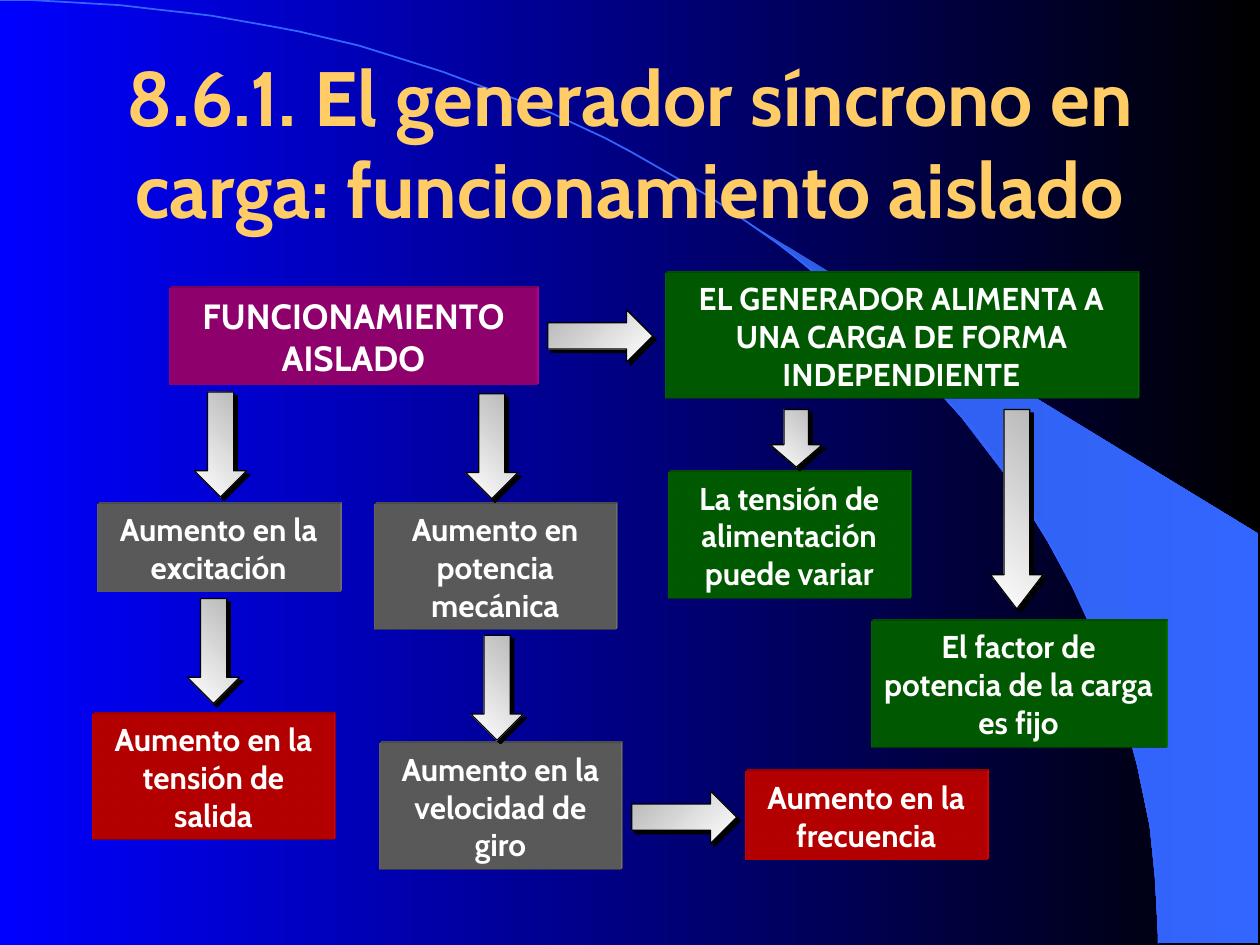
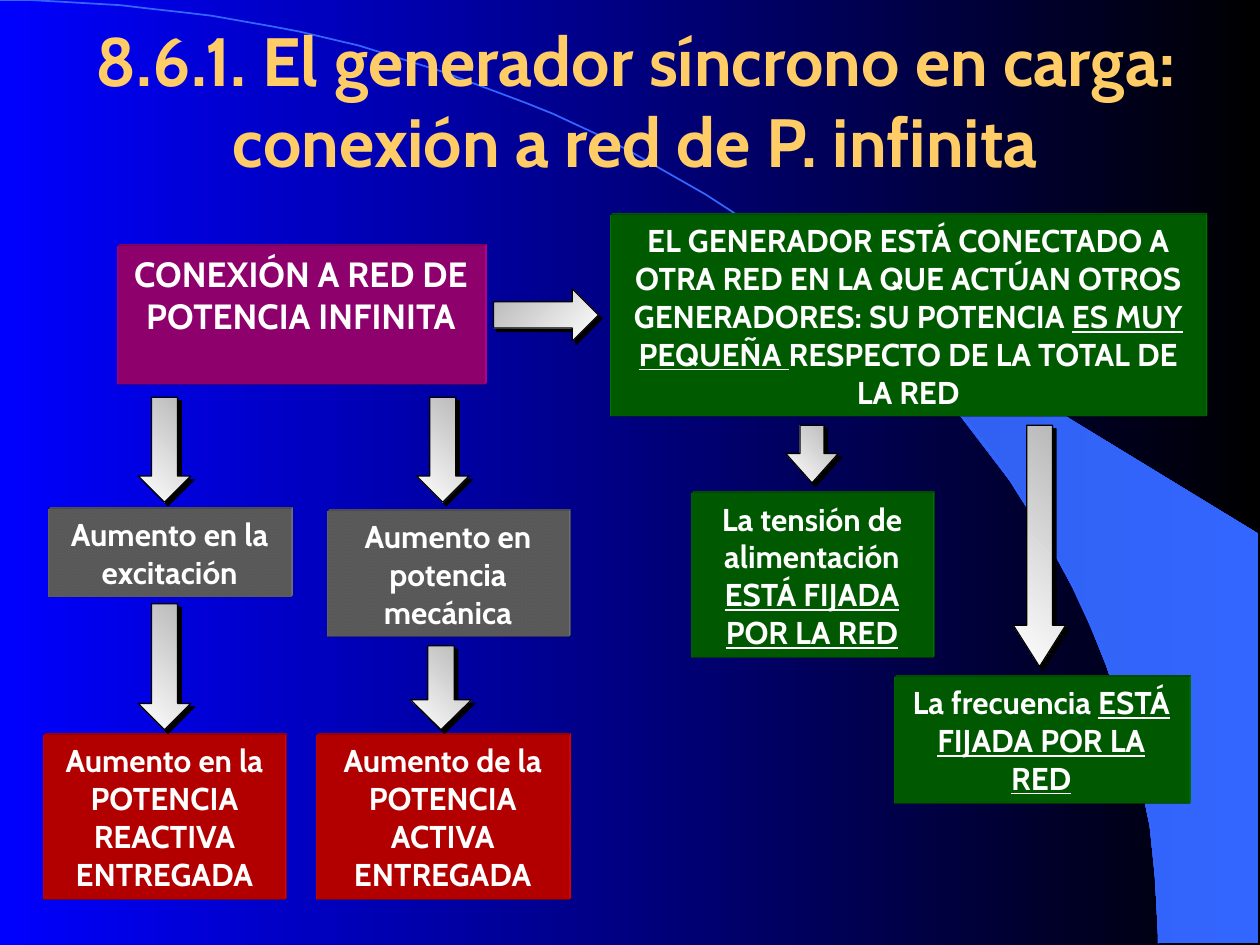
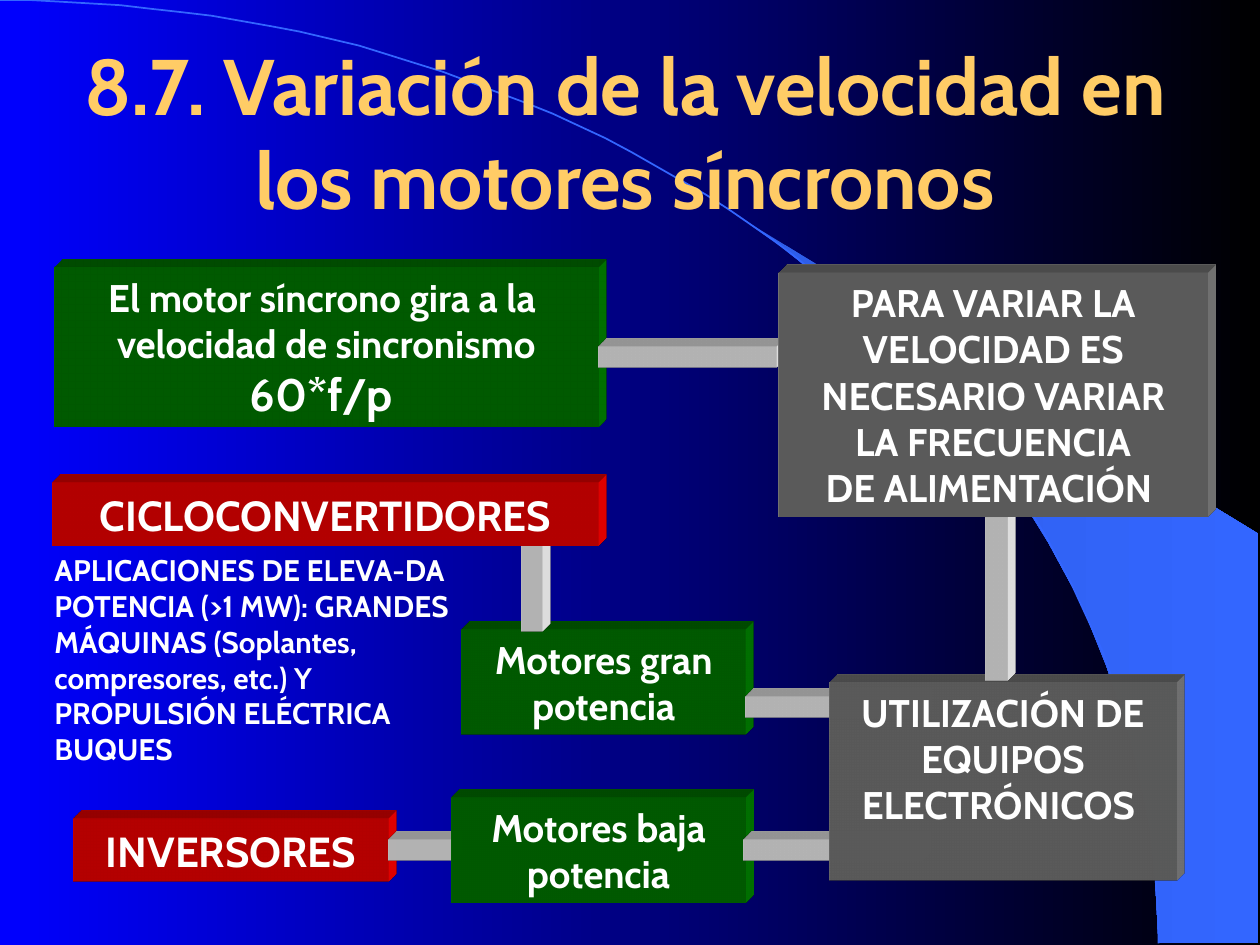
from math import cos, pi, radians, sin

from lxml import etree
from pptx import Presentation
from pptx.dml.color import RGBColor
from pptx.enum.shapes import MSO_SHAPE
from pptx.enum.text import MSO_ANCHOR, MSO_AUTO_SIZE, PP_ALIGN
from pptx.oxml import parse_xml
from pptx.util import Pt

RECTANGLE, ARROW = MSO_SHAPE.RECTANGLE, MSO_SHAPE.RIGHT_ARROW
CENTER, LEFT = PP_ALIGN.CENTER, PP_ALIGN.LEFT
TOP, MIDDLE = MSO_ANCHOR.TOP, MSO_ANCHOR.MIDDLE
NO_AUTOFIT, GROW = MSO_AUTO_SIZE.NONE, MSO_AUTO_SIZE.SHAPE_TO_FIT_TEXT

FONT = "Cabin"
WHITE, BLACK, GOLD, BLUE = "FFFFFF", "000000", "FFCC66", "3366FF"
GREEN, PURPLE, GRAY, RED = "008000", "CC0099", "808080", "FF0000"
NAMESPACE = 'xmlns:a="http://schemas.openxmlformats.org/drawingml/2006/main"'
SCENE = f"""<a:scene3d {NAMESPACE}><a:camera prst="legacyObliqueTopRight"/>
<a:lightRig rig="legacyFlat3" dir="b"/></a:scene3d>"""
EXTRUSION = f"""<a:sp3d {NAMESPACE} extrusionH="%d" prstMaterial="legacyMatte">
<a:extrusionClr><a:srgbClr val="%s"/></a:extrusionClr></a:sp3d>"""
SHADOW = f"""<a:effectLst {NAMESPACE}><a:outerShdw dist="35560" dir="2700000">
<a:srgbClr val="{BLACK}"/></a:outerShdw></a:effectLst>"""

color = RGBColor.from_string


def fill_gradient(fill, start, end, angle=0):
    fill.gradient()
    fill.gradient_angle = angle
    for stop, value in zip(fill.gradient_stops, (start, end)):
        stop.color.rgb = color(value)


def write_text(shape, text, size, text_color=WHITE, alignment=CENTER, space_before=0):
    """Write one paragraph per line; the parts between underscores are underlined."""
    for index, line in enumerate(text.split("\n")):
        frame = shape.text_frame
        paragraph = frame.add_paragraph() if index else frame.paragraphs[0]
        paragraph.alignment = alignment
        paragraph.space_before = Pt(space_before)
        for part_index, part in enumerate(line.split("_")):
            if not part:
                continue
            run = paragraph.add_run()
            run.text = part
            run.font.name = FONT
            run.font.size = Pt(size)
            run.font.bold = True
            run.font.color.rgb = color(text_color)
            if part_index % 2:
                run.font.underline = True


# title, size, (left, top, width)
TITLES = [
    ("8.6.1. El generador síncrono en carga: funcionamiento aislado", 44, (6, 36, 708)),
    ("8.6.1. El generador síncrono en carga: conexión a red de P. infinita", 39, (6, 12, 714)),
    ("8.7. Variación de la velocidad en los motores síncronos", 45, (12, 30, 690)),
]

# text, size, fill, (left, top, width, height); a block without text is a link bar
BLOCKS = [
    [
        ("EL GENERADOR ALIMENTA A UNA CARGA DE FORMA INDEPENDIENTE", 18, GREEN, (380, 156, 270, 72)),
        ("FUNCIONAMIENTO AISLADO", 20, PURPLE, (97, 165, 210, 55)),
        ("La tensión de alimentación puede variar", 18, GREEN, (382, 270, 138, 72)),
        ("El factor de potencia de la carga es fijo", 18, GREEN, (498, 355, 168, 72)),
        ("Aumento en la excitación", 18, GRAY, (56, 288, 138, 50)),
        ("Aumento en la tensión de salida", 18, RED, (53, 408, 138, 72)),
        ("Aumento en potencia mecánica", 18, GRAY, (214, 288, 138, 72)),
        ("Aumento en la velocidad de giro", 18, GRAY, (217, 425, 138, 72)),
        ("Aumento en la frecuencia", 18, RED, (426, 441, 138, 50)),
    ],
    [
        ("EL GENERADOR ESTÁ CONECTADO A OTRA RED EN LA QUE ACTÚAN OTROS GENERADORES: "
         "SU POTENCIA _ES MUY PEQUEÑA _RESPECTO DE LA TOTAL DE LA RED",
         18, GREEN, (349, 123, 340, 115)),
        ("CONEXIÓN A RED DE POTENCIA INFINITA", 20, PURPLE, (67, 141, 210, 79)),
        ("La tensión de alimentación _ESTÁ FIJADA POR LA RED_", 18, GREEN, (395, 282, 138, 94)),
        ("La frecuencia _ESTÁ FIJADA POR LA RED_", 18, GREEN, (511, 387, 168, 72)),
        ("Aumento en la excitación", 18, GRAY, (28, 291, 138, 50)),
        ("Aumento en la POTENCIA REACTIVA ENTREGADA", 18, RED, (25, 420, 138, 94)),
        ("Aumento en potencia mecánica", 18, GRAY, (187, 292, 138, 72)),
        ("Aumento de la POTENCIA ACTIVA ENTREGADA", 18, RED, (181, 420, 144, 94)),
    ],
    [
        ("Motores gran potencia", 22, GREEN, (264, 360, 162, 60)),
        ("INVERSORES", 24, RED, (42, 468, 180, 36)),
        ("", 0, WHITE, (426, 398, 102, 12)),
        ("", 0, WHITE, (298, 311, 12, 50)),
        ("CICLOCONVERTIDORES", 24, RED, (30, 276, 312, 36)),
        ("", 0, WHITE, (222, 480, 37, 12)),
        ("Motores baja potencia", 22, GREEN, (258, 456, 168, 60)),
        ("", 0, WHITE, (425, 480, 102, 12)),
        ("UTILIZACIÓN DE\nEQUIPOS ELECTRÓNICOS ", 22, GRAY, (474, 390, 198, 113)),
        ("", 0, WHITE, (563, 296, 13, 93)),
        ("El motor síncrono gira a la \nvelocidad de sincronismo\n60*f/p ", 22, GREEN,
         (31, 153, 311, 91)),
        ("", 0, WHITE, (342, 198, 102, 12)),
        ("PARA VARIAR LA\nVELOCIDAD ES\nNECESARIO VARIAR\nLA FRECUENCIA\nDE ALIMENTACIÓN ",
         22, GRAY, (445, 156, 245, 139)),
    ],
]
SPACE_BEFORE = [6, 6, 0]
DEPTHS = [Pt(3), Pt(3), Pt(13)]

# tail x, tail y, length, rotation, thickness, shaft and head proportions
ARROWS = [
    [
        (313, 192, 60, 0, 30, 0.5, 0.5),
        (581, 234, 114, 90, 30, 0.49, 0.65),
        (455, 234, 33, 90, 30, 0.47, 0.43),
        (126, 224, 60, 90, 30, 0.5, 0.5),
        (281, 225, 60, 90, 30, 0.5, 0.5),
        (122, 342, 60, 90, 30, 0.5, 0.5),
        (284, 363, 60, 90, 30, 0.5, 0.5),
        (361, 467, 60, 0, 30, 0.5, 0.5),
    ],
    [
        (282, 180, 60, 0, 30, 0.5, 0.5),
        (594, 243, 138, 90, 30, 0.49, 0.79),
        (464, 243, 33, 90, 30, 0.46, 0.56),
        (94, 227, 60, 90, 30, 0.5, 0.5),
        (253, 227, 60, 90, 30, 0.5, 0.5),
        (94, 345, 72, 90, 30, 0.5, 0.5),
        (252, 369, 48, 90, 35, 0.43, 0.49),
    ],
    [],
]

presentation = Presentation()
presentation.slide_width, presentation.slide_height = Pt(720), Pt(540)
master = presentation.slide_master
fill_gradient(master.background.fill, "0000FF", BLACK)
title_only = presentation.slide_layouts[5]
slides = [presentation.slides.add_slide(title_only) for _ in TITLES]

# Shared decoration: drawn with the slide builder, then moved to the master
SWOOSH = [
    (662, 539), (719, 539), (719, 305), (424, 125), (449, 143), (470, 160),
    (493, 180), (516, 202), (549, 238), (578, 276), (599, 310), (618, 345),
    (632, 380), (643, 412), (650, 438), (657, 472), (660, 501),
]
ARC_STEPS = 60
angles = [step * pi / 2 / ARC_STEPS for step in range(ARC_STEPS + 1)]
arc_points = [(662.4 * sin(angle), 539 - 539 * cos(angle)) for angle in angles]
decoration = []
for points, closed in ((SWOOSH, True), (arc_points, False)):
    builder = slides[0].shapes.build_freeform(*points[0], scale=Pt(1))
    builder.add_line_segments(points[1:], close=closed)
    decoration.append(builder.convert_to_shape())
swoosh, arc = decoration
fill_gradient(swoosh.fill, "2E5DE7", BLUE)
swoosh.line.fill.background()
arc.fill.background()
arc.line.color.rgb = color(BLUE)
arc.line.width = Pt(1)
for position, shape in enumerate(decoration, start=2):
    shape.shadow.inherit = False
    master.shapes.element.insert(position, shape.element)

for index, slide in enumerate(slides):
    title_text, title_size, (left, top, width) = TITLES[index]
    title = slide.shapes.title
    title.left, title.top, title.width, title.height = Pt(left), Pt(top), Pt(width), Pt(90)
    title.text_frame.auto_size = NO_AUTOFIT
    title.text_frame.vertical_anchor = MIDDLE
    write_text(title, title_text, title_size, GOLD)

    for text, size, fill_color, box in BLOCKS[index]:
        block = slide.shapes.add_shape(RECTANGLE, *map(Pt, box))
        block.shadow.inherit = False
        block.fill.solid()
        block.fill.fore_color.rgb = color(fill_color)
        block.line.fill.background()
        properties = block.element.spPr
        properties.append(parse_xml(SCENE))
        properties.append(parse_xml(EXTRUSION % (DEPTHS[index], fill_color)))
        if text:
            frame = block.text_frame
            frame.word_wrap = "60*f/p" not in text
            frame.auto_size = GROW
            frame.vertical_anchor = TOP
            write_text(block, text, size, space_before=SPACE_BEFORE[index])
            for paragraph in frame.paragraphs:
                if paragraph.text.startswith("60*f/p"):
                    paragraph.runs[0].font.size = Pt(26)

    for tail_x, tail_y, length, rotation, thickness, shaft, head in ARROWS[index]:
        center_x = tail_x + length / 2 * cos(radians(rotation))
        center_y = tail_y + length / 2 * sin(radians(rotation))
        arrow = slide.shapes.add_shape(
            ARROW, Pt(center_x - length / 2), Pt(center_y - thickness / 2), Pt(length), Pt(thickness))
        arrow.rotation = rotation
        arrow.adjustments[0], arrow.adjustments[1] = shaft, head
        fill_gradient(arrow.fill, "B6B6B6", WHITE, 315)
        arrow.line.color.rgb = color(BLACK)
        arrow.line.width = Pt(0.75)
        arrow.element.spPr.append(parse_xml(SHADOW))

applications = slides[2].shapes.add_textbox(Pt(24), Pt(312), Pt(240), Pt(130))
applications.text_frame.word_wrap = True
applications.text_frame.auto_size = GROW
write_text(
    applications,
    "APLICACIONES DE ELEVA-DA POTENCIA (>1 MW): GRANDES MÁQUINAS (Soplantes, "
    "compresores, etc.) Y PROPULSIÓN ELÉCTRICA BUQUES",
    17, alignment=LEFT, space_before=6)

presentation.save("out.pptx")
